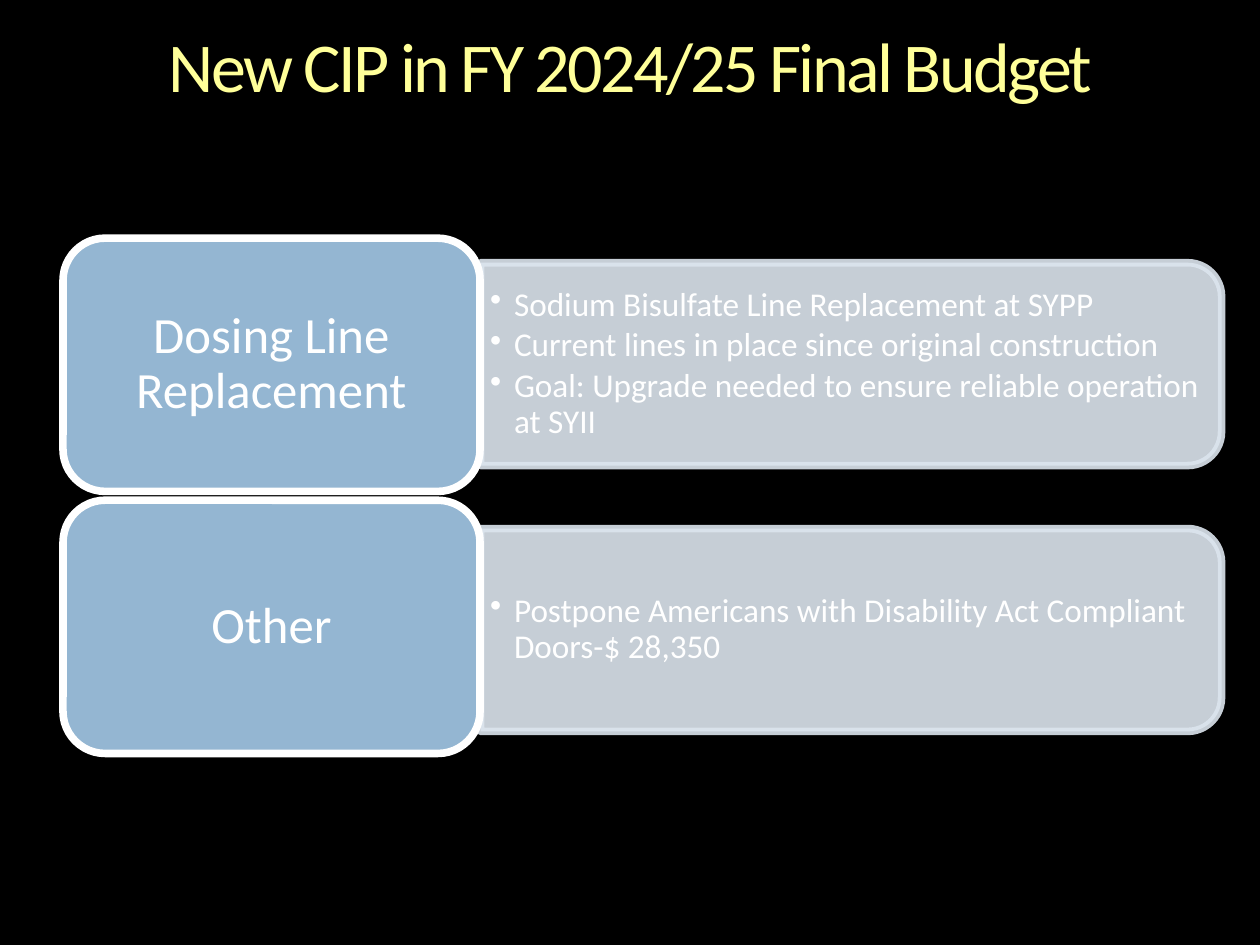
from pptx import Presentation
from pptx.dml.color import RGBColor
from pptx.enum.shapes import MSO_SHAPE as Shape
from pptx.enum.text import MSO_ANCHOR as Anchor, PP_ALIGN as Align
from pptx.oxml.ns import qn
from pptx.util import Inches, Pt
from lxml.etree import SubElement

BLACK = RGBColor(0x00, 0x00, 0x00)
WHITE = RGBColor(0xFF, 0xFF, 0xFF)
YELLOW = RGBColor(0xFF, 0xFF, 0x99)
BLUE = RGBColor(0x94, 0xB6, 0xD2)
PALE = RGBColor(0xDC, 0xE5, 0xEE)

CELL = 0.1  # inches: a grid of 100 columns by 75 rows
ROWS = [
    ("Dosing Line Replacement", [
        "Sodium Bisulfate Line Replacement at SYPP",
        "Current lines in place since original construction",
        "Goal: Upgrade needed to ensure reliable operation at SYII",
    ]),
    ("Other", ["Postpone Americans with Disability Act Compliant Doors-$ 28,350"]),
]


def cells(*counts):
    return [Inches(n * CELL) for n in counts]


def write(frame, lines, size, color=WHITE, align=Align.LEFT, pad=(0, 0),
          bullet=False, after=0, track=None):
    """Fill a text frame, one paragraph a line; pad is across and down."""
    frame.word_wrap = True
    frame.vertical_anchor = Anchor.MIDDLE
    frame.margin_left = frame.margin_right = Inches(pad[0])
    frame.margin_top = frame.margin_bottom = Inches(pad[1])
    for i, line in enumerate(lines):
        para = frame.add_paragraph() if i else frame.paragraphs[0]
        para.alignment = align
        para.line_spacing = 0.9
        para.space_after = Pt(after)
        if bullet:
            props = para._p.get_or_add_pPr()
            props.set("marL", str(Inches(0.19)))
            props.set("indent", str(-Inches(0.19)))
            SubElement(props, qn("a:buChar"), char="•")
        run = para.add_run()
        run.text = line
        font = run.font
        font.name, font.size, font.color.rgb = "Calibri", Pt(size), color
        if track is not None:
            run._r.get_or_add_rPr().set("spc", str(int(track * 100)))


class Deck:
    def __init__(self):
        self.prs = Presentation()
        self.prs.slide_width, self.prs.slide_height = cells(100, 75)
        self.slide = self.prs.slides.add_slide(self.prs.slide_layouts[5])
        fill = self.slide.background.fill
        fill.solid()
        fill.fore_color.rgb = BLACK

    def title(self, text):
        box = self.slide.shapes.title
        box.left, box.top, box.width, box.height = cells(4.2, 2.5, 91.7, 6.1)
        write(box.text_frame, [text], 40, YELLOW, Align.CENTER, track=-1.5)

    def block(self, kind, mid_x, mid_y, wide, high, fill, line):
        """Add a filled shape around its middle point."""
        place = cells(mid_x - wide / 2, mid_y - high / 2, wide, high)
        shape = self.slide.shapes.add_shape(kind, *place)
        shape.shadow.inherit = False
        shape.fill.solid()
        shape.fill.fore_color.rgb = fill
        shape.line.color.rgb = line
        shape.line.width = Pt(4.33)
        return shape

    def panel(self, mid, lines):
        shape = self.block(Shape.ROUND_2_SAME_RECTANGLE, 67.55, mid,
                           16.1, 58.8, PALE, PALE)
        shape.rotation = 90
        for tint in shape.element.spPr.iter(qn("a:srgbClr")):
            SubElement(tint, qn("a:alpha"), val="90000")
        box = self.slide.shapes.add_textbox(*cells(38.1, mid - 7.25, 58.1, 14.5))
        write(box.text_frame, lines, 19, pad=(0.08, 0.04), bullet=True, after=2.85)

    def label(self, mid, text):
        shape = self.block(Shape.ROUNDED_RECTANGLE, 21.55, mid,
                           33.1, 20.1, BLUE, WHITE)
        write(shape.text_frame, [text], 29, align=Align.CENTER, pad=(0.12, 0.06))


def main():
    deck = Deck()
    deck.title("New CIP in FY 2024/25 Final Budget")
    for i, (name, points) in enumerate(ROWS):
        deck.panel(28.9 + 21.1 * i, points)
        deck.label(28.95 + 20.8 * i, name)
    deck.prs.save("out.pptx")


if __name__ == "__main__":
    main()
